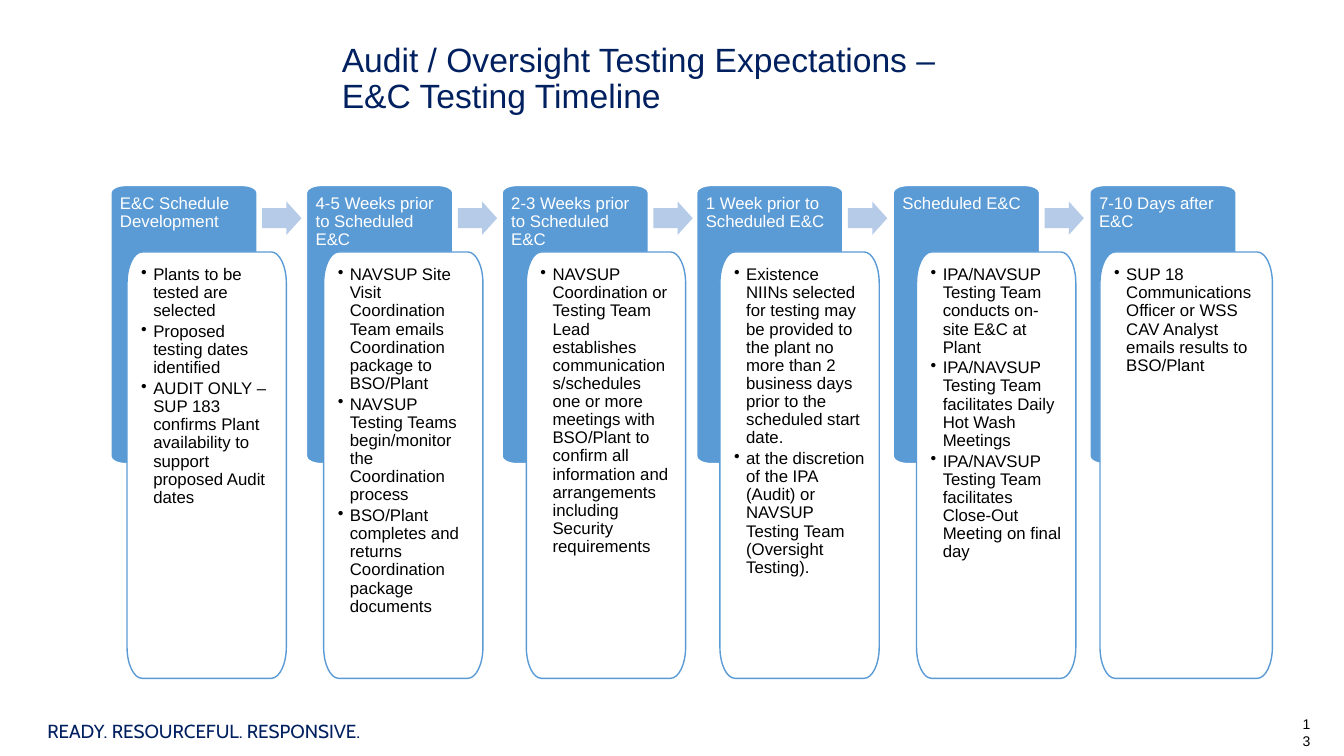
from lxml import etree
from pptx import Presentation
from pptx.dml.color import RGBColor
from pptx.enum.shapes import MSO_SHAPE
from pptx.enum.text import MSO_ANCHOR, MSO_AUTO_SIZE, PP_ALIGN
from pptx.oxml.ns import qn
from pptx.util import Inches, Pt

RIGHT_ARROW = MSO_SHAPE.RIGHT_ARROW
TOP, MIDDLE, BOTTOM = MSO_ANCHOR.TOP, MSO_ANCHOR.MIDDLE, MSO_ANCHOR.BOTTOM
LEFT = PP_ALIGN.LEFT
NO_AUTOFIT = MSO_AUTO_SIZE.NONE

COLOURS = {
    "navy": "002060",
    "blue": "5B9BD5",
    "pale": "B5CBE7",
    "white": "FFFFFF",
    "black": "000000",
}

HEADER_WIDTH = 1.45
ARROW_OFFSET = 1.5
CORNER_WIDTH = 0.15
CURVE_PULL = 0.45

STEPS = [
    ("E&C Schedule Development", 1.1, 1.26, 1.58, [
        "Plants to be tested are selected",
        "Proposed testing dates identified",
        "AUDIT ONLY – SUP 183 confirms Plant availability to support proposed Audit dates",
    ]),
    ("4-5 Weeks prior to Scheduled E&C", 3.04, 3.21, 1.58, [
        "NAVSUP Site Visit Coordination Team emails Coordination package to BSO/Plant",
        "NAVSUP Testing Teams begin/monitor the Coordination process",
        "BSO/Plant completes and returns Coordination package documents",
    ]),
    ("2-3 Weeks prior to Scheduled E&C", 4.98, 5.22, 1.58, [
        "NAVSUP Coordination or Testing Team Lead establishes communications/schedules "
        "one or more meetings with BSO/Plant to confirm all information and arrangements "
        "including Security requirements",
    ]),
    ("1 Week prior to Scheduled E&C", 6.91, 7.14, 1.58, [
        "Existence NIINs selected for testing may be provided to the plant no more than "
        "2 business days prior to the scheduled start date.",
        "at the discretion of the IPA (Audit) or NAVSUP Testing Team (Oversight Testing).",
    ]),
    ("Scheduled E&C", 8.86, 9.09, 1.58, [
        "IPA/NAVSUP Testing Team conducts on-site E&C at Plant",
        "IPA/NAVSUP Testing Team facilitates Daily Hot Wash Meetings",
        "IPA/NAVSUP Testing Team facilitates Close-Out Meeting on final day",
    ]),
    ("7-10 Days after E&C", 10.81, 10.91, 1.71, [
        "SUP 18 Communications Officer or WSS CAV Analyst emails results to BSO/Plant",
    ]),
]


def colour(name):
    return RGBColor.from_string(COLOURS[name])


def add_bullet(paragraph, indent):
    properties = paragraph._p.get_or_add_pPr()
    properties.set("marL", str(Inches(indent)))
    properties.set("indent", str(-Inches(indent)))
    etree.SubElement(properties, qn("a:buChar")).set("char", "•")


def write_text(shape, paragraphs, size=12, font="Arial", color="black", anchor=TOP,
               insets=(0.1, 0.05, 0.1, 0.05), line_spacing=1.0, space_after=0,
               bullet_indent=None):
    frame = shape.text_frame
    frame.auto_size = NO_AUTOFIT
    frame.word_wrap = True
    frame.vertical_anchor = anchor
    (frame.margin_left, frame.margin_top,
     frame.margin_right, frame.margin_bottom) = map(Inches, insets)
    for index, text in enumerate(paragraphs):
        paragraph = frame.add_paragraph() if index else frame.paragraphs[0]
        paragraph.text = text
        if bullet_indent:
            add_bullet(paragraph, bullet_indent)
        paragraph.alignment = LEFT
        paragraph.line_spacing = line_spacing
        paragraph.space_before = Pt(0)
        paragraph.space_after = Pt(space_after)
        paragraph.font.size = Pt(size)
        paragraph.font.name = font
        paragraph.font.color.rgb = colour(color)


def paint(shape, fill, line=None):
    shape.shadow.inherit = False
    shape.fill.solid()
    shape.fill.fore_color.rgb = colour(fill)
    if line:
        shape.line.color.rgb = colour(line)
        shape.line.width = Pt(1)
    else:
        shape.line.fill.background()


def curve_corners(shape):
    segments = list(shape._element.iter(qn("a:lnTo")))
    for first in range(0, len(segments), 4):
        curve = etree.Element(qn("a:cubicBezTo"))
        segments[first].addprevious(curve)
        for segment in segments[first:first + 3]:
            curve.append(segment[0])
            segment.getparent().remove(segment)


def add_rounded_panel(slide, left, top, width, height, corner_height):
    right, bottom = left + width, top + height
    corners = [
        (left, top, 1, 1, False),
        (right, top, -1, 1, True),
        (right, bottom, -1, -1, False),
        (left, bottom, 1, -1, True),
    ]
    points = []
    for x, y, x_sign, y_sign, starts_level in corners:
        x_step, y_step = x_sign * CORNER_WIDTH, y_sign * corner_height
        corner = [
            (x, y + y_step),
            (x, y + y_step * CURVE_PULL),
            (x + x_step * CURVE_PULL, y),
            (x + x_step, y),
        ]
        points += reversed(corner) if starts_level else corner
    points = [(Inches(x), Inches(y)) for x, y in points]
    builder = slide.shapes.build_freeform(*points[0])
    builder.add_line_segments(points[1:], close=True)
    panel = builder.convert_to_shape()
    curve_corners(panel)
    return panel


def add_header(slide, left, heading):
    header = add_rounded_panel(slide, left, 1.84, HEADER_WIDTH, 2.76, 0.07)
    paint(header, "blue", line="white")
    write_text(header, [heading], color="white", insets=(0.09, 0.09, 0.09, 2.01),
               line_spacing=0.9, space_after=4.2)


def add_card(slide, left, width, items):
    card = add_rounded_panel(slide, left, 2.5, width, 4.23, 0.31)
    paint(card, "white", line="blue")
    write_text(card, items, insets=(0.14, 0.14, 0.14, 0.14), line_spacing=0.9,
               space_after=1.8, bullet_indent=0.12)


def add_arrow(slide, left):
    arrow = slide.shapes.add_shape(
        RIGHT_ARROW, Inches(left), Inches(2), Inches(0.39), Inches(0.33))
    arrow.adjustments[0] = 0.6
    arrow.adjustments[1] = 0.45
    paint(arrow, "pale")


def add_label(slide, left, top, width, height, text, **text_format):
    box = slide.shapes.add_textbox(
        Inches(left), Inches(top), Inches(width), Inches(height))
    write_text(box, [text], **text_format)


def place_title(slide, text):
    title = slide.shapes.title
    title.left, title.top = Inches(3.34), Inches(0.43)
    title.width, title.height = Inches(8.63), Inches(0.77)
    write_text(title, [text], size=24, color="navy", anchor=BOTTOM,
               insets=(0.05, 0.05, 0.05, 0.05), line_spacing=0.9)


def main():
    presentation = Presentation()
    presentation.slide_width = Inches(13.33)
    presentation.slide_height = Inches(7.5)
    slide = presentation.slides.add_slide(presentation.slide_layouts[5])

    place_title(slide, "Audit / Oversight Testing Expectations –\vE&C Testing Timeline")
    for index, (heading, left, card_left, card_width, items) in enumerate(STEPS):
        add_header(slide, left, heading)
        add_card(slide, card_left, card_width, items)
        if index < len(STEPS) - 1:
            add_arrow(slide, left + ARROW_OFFSET)

    add_label(slide, 0.4, 7.04, 3.33, 0.42, "READY. RESOURCEFUL. RESPONSIVE.",
              size=13.5, font="Cabin", color="navy", anchor=MIDDLE,
              insets=(0.07, 0.04, 0.07, 0.04))
    add_label(slide, 12.82, 7.05, 0.28, 0.27, "13", size=10)
    presentation.save("out.pptx")


if __name__ == "__main__":
    main()
